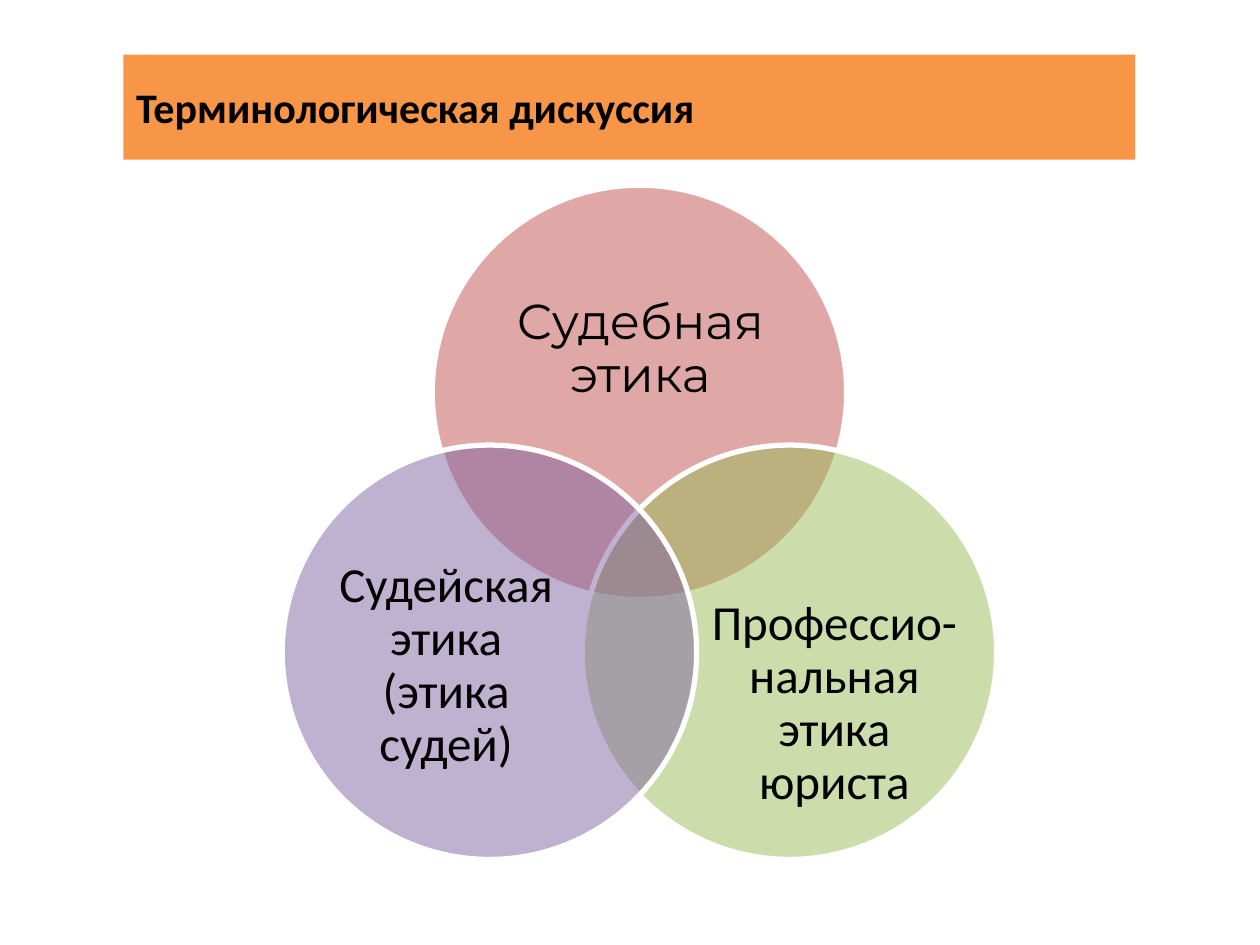
from dataclasses import dataclass
from math import cos, radians, sin

from lxml.etree import SubElement
from pptx import Presentation
from pptx.dml.color import RGBColor
from pptx.enum.shapes import MSO_SHAPE as Preset
from pptx.enum.text import MSO_ANCHOR as Anchor, MSO_AUTO_SIZE as AutoSize, PP_ALIGN as Align
from pptx.oxml.ns import qn
from pptx.util import Inches, Pt


@dataclass(frozen=True)
class Theme:
    banner: str = "F79646"
    red: str = "C0504D"
    green: str = "9BBB59"
    purple: str = "8064A2"
    outline: str = "FFFFFF"
    ink: str = "000000"
    font: str = "Calibri"
    accent_font: str = "Montserrat"
    title_size: int = 24
    label_size: int = 28
    outline_width: int = 3
    opacity: int = 50


@dataclass(frozen=True)
class Box:
    left: float
    top: float
    width: float
    height: float

    def inches(self):
        return [Inches(side) for side in (self.left, self.top, self.width, self.height)]


THEME = Theme()
CIRCLES = [
    ("Судебная этика", THEME.red, THEME.accent_font, -90, Box(0.44, 0.57, 2.42, 1.48)),
    ("Профессио-нальная этика юриста", THEME.green, THEME.font, 30, Box(1.01, 1.15, 1.98, 1.81)),
    ("Судейская этика (этика cудей)", THEME.purple, THEME.font, 150, Box(0.31, 0.85, 1.98, 1.81)),
]


def write_text(frame, text, *, font=THEME.font, size=THEME.label_size, bold=False,
               align=Align.CENTER, spacing=0.9, inset=(0, 0)):
    frame.word_wrap = True
    frame.vertical_anchor = Anchor.MIDDLE
    frame.margin_left = frame.margin_right = Inches(inset[0])
    frame.margin_top = frame.margin_bottom = Inches(inset[1])
    para = frame.paragraphs[0]
    para.alignment = align
    para.line_spacing = spacing
    span = para.add_run()
    span.text = text
    span.font.name = font
    span.font.size = Pt(size)
    span.font.bold = bold
    span.font.color.rgb = RGBColor.from_string(THEME.ink)


def place_title(page, box):
    title = page.shapes.title
    title.left, title.top, title.width, title.height = box.inches()
    title.fill.solid()
    title.fill.fore_color.rgb = RGBColor.from_string(THEME.banner)
    write_text(title.text_frame, "Терминологическая дискуссия", size=THEME.title_size,
               bold=True, align=Align.LEFT, spacing=1.0, inset=(0.1, 0.05))
    title.text_frame.auto_size = AutoSize.SHAPE_TO_FIT_TEXT


def add_circle(group, box, color):
    circle = group.shapes.add_shape(Preset.OVAL, *box.inches())
    circle.shadow.inherit = False
    circle.fill.solid()
    circle.fill.fore_color.rgb = RGBColor.from_string(color)
    tint = circle.element.spPr.find(qn("a:solidFill")).find(qn("a:srgbClr"))
    SubElement(tint, qn("a:alpha"), val=str(THEME.opacity * 1000))
    circle.line.color.rgb = RGBColor.from_string(THEME.outline)
    circle.line.width = Pt(THEME.outline_width)


def place_venn(page, box):
    diameter = box.width * 0.58
    spread = (box.width - diameter) / 2 / cos(radians(30))
    center_x = box.left + box.width / 2
    center_y = box.top + diameter / 2 + spread
    group = page.shapes.add_group_shape()
    for text, color, font, angle, label in CIRCLES:
        left = center_x + spread * cos(radians(angle)) - diameter / 2
        top = center_y + spread * sin(radians(angle)) - diameter / 2
        add_circle(group, Box(left, top, diameter, diameter), color)
        area = Box(left + label.left, top + label.top, label.width, label.height)
        caption = group.shapes.add_textbox(*area.inches())
        write_text(caption.text_frame, text, font=font)


def main():
    deck = Presentation()
    deck.slide_width, deck.slide_height = Inches(10), Inches(7.5)
    page = deck.slides.add_slide(deck.slide_layouts[5])
    place_title(page, Box(0.98, 0.6, 8.03, 0.5))
    place_venn(page, Box(2.24, 1.47, 5.67, 5.35))
    deck.save("out.pptx")


if __name__ == "__main__":
    main()
